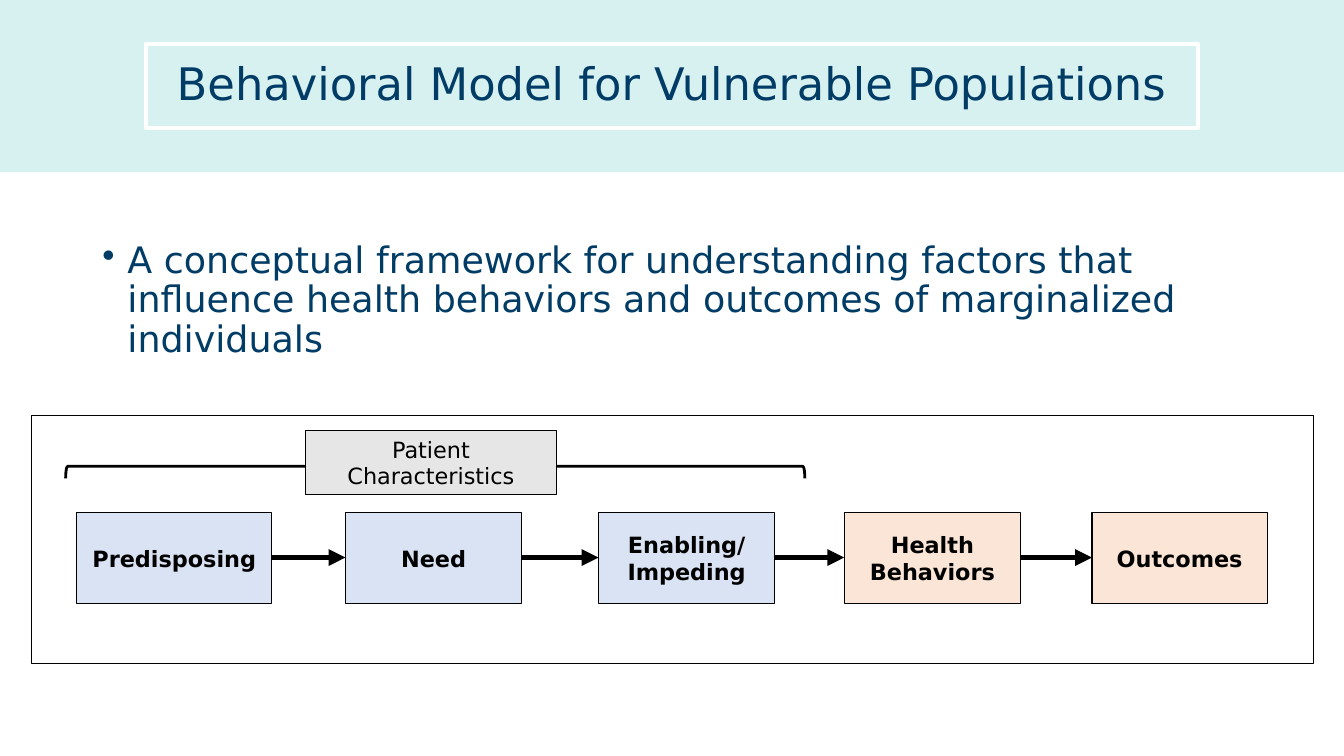
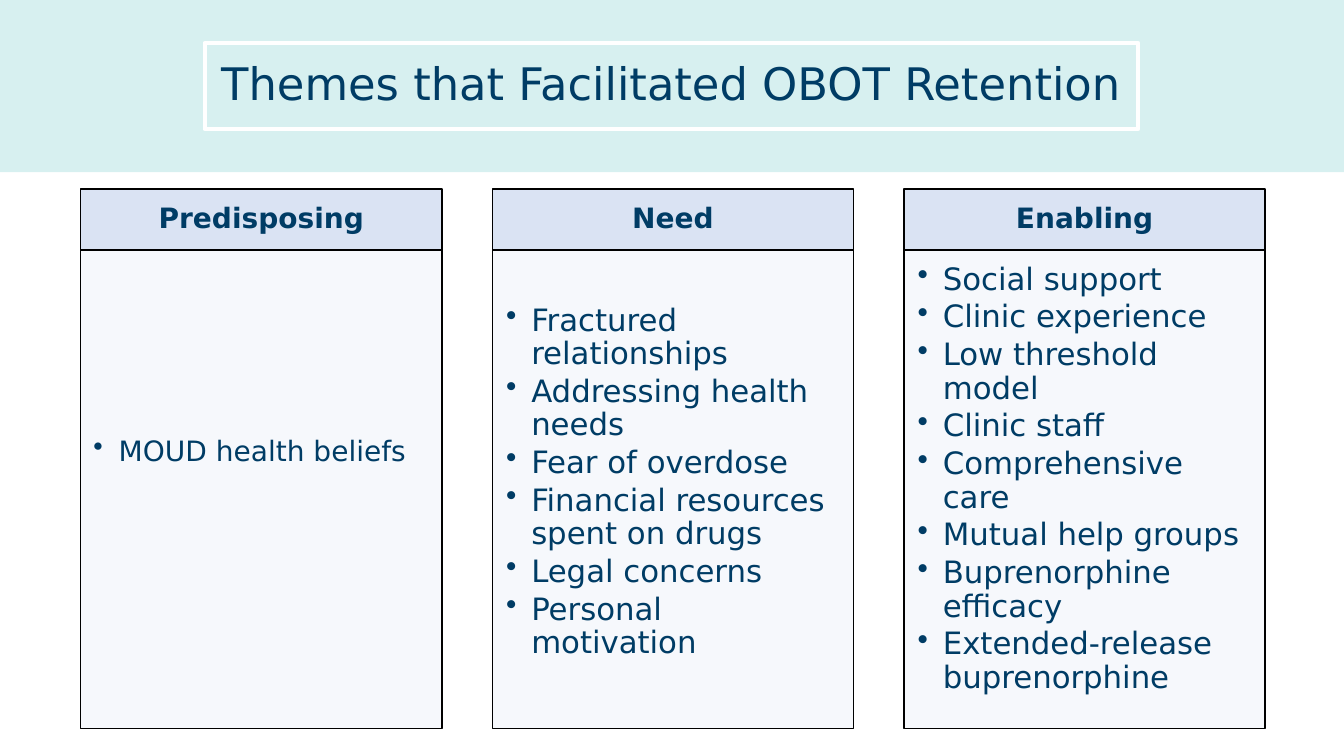
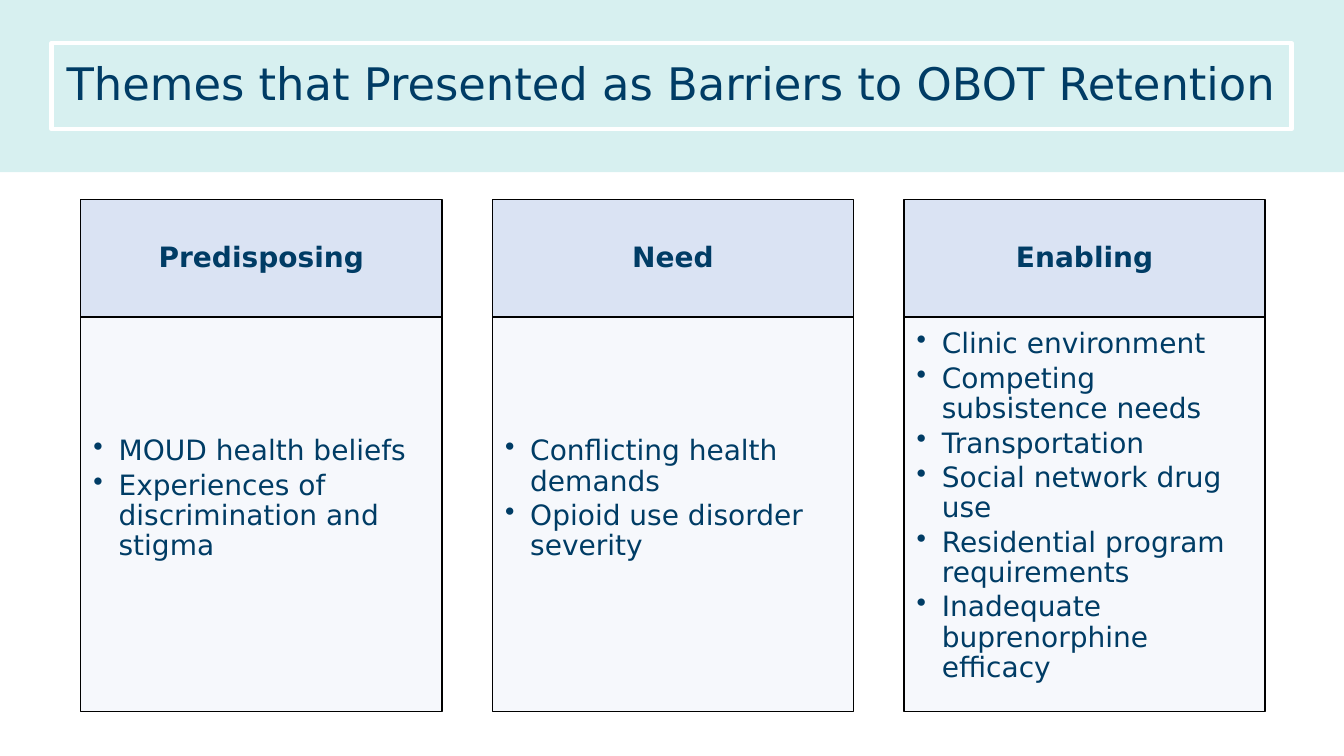
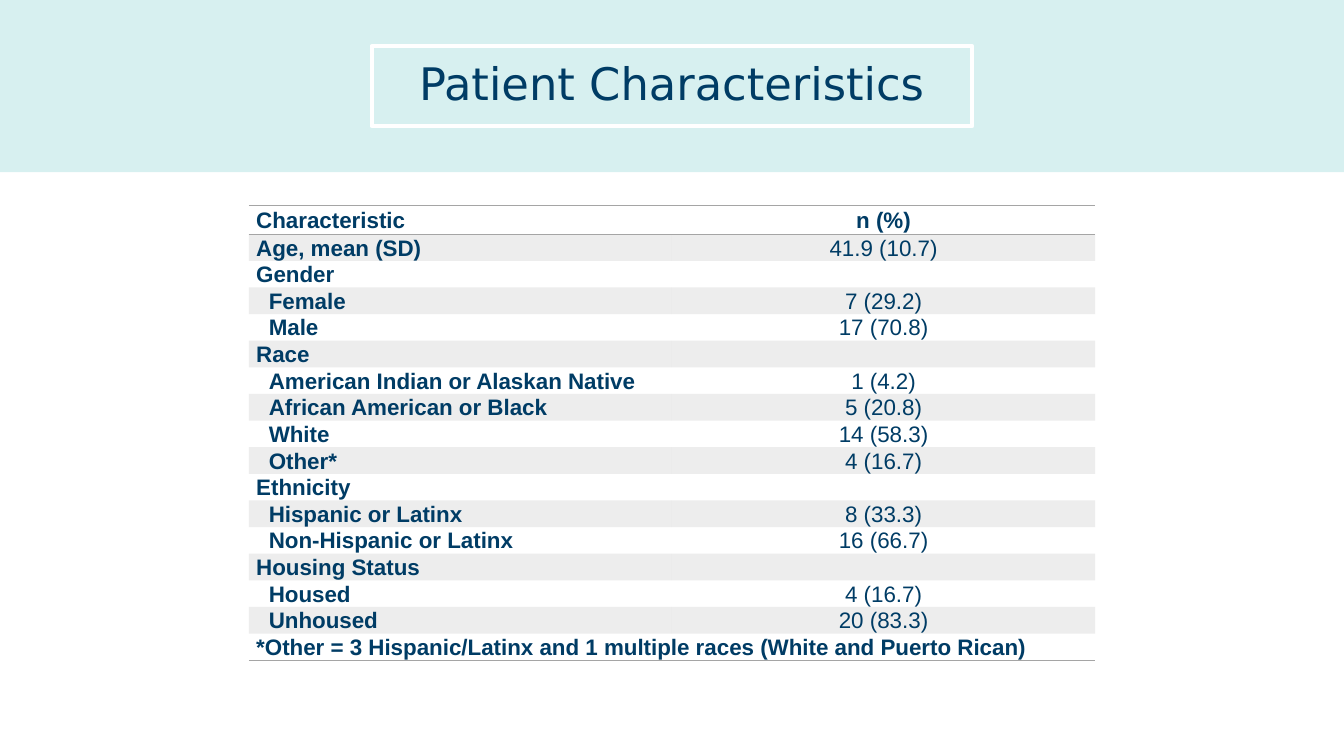
from pptx import Presentation
from pptx.dml.color import RGBColor
from pptx.enum.shapes import MSO_CONNECTOR, MSO_SHAPE
from pptx.enum.text import MSO_ANCHOR, PP_ALIGN
from pptx.oxml.ns import qn
from pptx.oxml.xmlchemy import OxmlElement
from pptx.util import Pt

PX = 9525
WIDTH, HEIGHT = 1280, 720
RECTANGLE = MSO_SHAPE.RECTANGLE
BRACE = MSO_SHAPE.RIGHT_BRACE
STRAIGHT = MSO_CONNECTOR.STRAIGHT
LEFT, CENTER = PP_ALIGN.LEFT, PP_ALIGN.CENTER
TOP, MIDDLE = MSO_ANCHOR.TOP, MSO_ANCHOR.MIDDLE
NO_STYLE = "{2D5ABB26-0587-4C30-8999-92F81FD0307C}"

NAVY, BLACK, WHITE = "003C65", "000000", "FFFFFF"
AQUA, BLUE, PALE_BLUE = "B0E3E2", "DAE3F3", "F6F8FC"
PEACH, LIGHT_GRAY, GRAY = "FBE5D6", "E7E6E6", "A5A5A5"
FONT, TABLE_FONT = "DejaVu Sans", "Arial"


def color(value):
    return RGBColor.from_string(value)


def add_element(parent, tag, **attributes):
    element = OxmlElement(tag)
    for name, value in attributes.items():
        element.set(name, str(value))
    parent.append(element)
    return element


class Deck:
    def __init__(self):
        self.presentation = Presentation()
        self.presentation.slide_width = WIDTH * PX
        self.presentation.slide_height = HEIGHT * PX
        self.slide = None

    def new_slide(self, title, width, height):
        layout = self.presentation.slide_layouts[6]
        self.slide = self.presentation.slides.add_slide(layout)
        self.box(0, 0, WIDTH, 164, fill=AQUA, opacity=50)
        frame = self.box((WIDTH - width) // 2, 82 - height // 2, width, height,
                         line=WHITE, line_width=3)
        self.set_text(frame, [title], 32, spacing=0.9)

    def paint(self, fill, value, opacity=100):
        if value is None:
            fill.background()
            return
        fill.solid()
        fill.fore_color.rgb = color(value)
        if opacity < 100:
            srgb = fill._xPr.find(qn("a:solidFill"))[0]
            add_element(srgb, "a:alpha", val=opacity * 1000)

    def box(self, left, top, width, height, fill=None, line=None,
            line_width=1, opacity=100, kind=RECTANGLE):
        shape = self.slide.shapes.add_shape(
            kind, left * PX, top * PX, width * PX, height * PX)
        shape.shadow.inherit = False
        self.paint(shape.fill, fill, opacity)
        self.paint(shape.line.fill, line)
        if line:
            shape.line.width = Pt(line_width)
        return shape

    def style(self, paragraph, size, ink=NAVY, bold=False, align=CENTER,
              spacing=1.0, font=FONT):
        paragraph.alignment = align
        paragraph.line_spacing = spacing
        paragraph.font.name = font
        paragraph.font.size = Pt(size)
        paragraph.font.bold = bold
        paragraph.font.color.rgb = color(ink)

    def set_text(self, shape, lines, size, anchor=MIDDLE, bullets=False, **style):
        frame = shape.text_frame
        frame.word_wrap = True
        frame.vertical_anchor = anchor
        for index, line in enumerate(lines):
            paragraph = frame.paragraphs[0] if index == 0 else frame.add_paragraph()
            paragraph.text = line
            if bullets:
                properties = paragraph._p.get_or_add_pPr()
                properties.set("marL", str(24 * PX))
                properties.set("indent", str(-24 * PX))
                add_element(properties, "a:buChar", char="•")
                paragraph.space_after = Pt(size * 0.15)
            self.style(paragraph, size, **style)

    def bullet_list(self, shape, lines, size):
        self.set_text(shape, lines, size, anchor=TOP, bullets=True, align=LEFT,
                      spacing=0.9)

    def body_text(self, left, top, width, height, lines, size):
        shape = self.slide.shapes.add_textbox(
            left * PX, top * PX, width * PX, height * PX)
        self.bullet_list(shape, lines, size)

    def arrow(self, start, end, y):
        connector = self.slide.shapes.add_connector(
            STRAIGHT, start * PX, y * PX, end * PX, y * PX)
        connector.line.color.rgb = color(BLACK)
        connector.line.width = Pt(4)
        properties = connector._element.spPr
        add_element(properties.find(qn("a:ln")), "a:tailEnd", type="triangle")
        add_element(properties, "a:effectLst")

    def theme_columns(self, top, header_height, body_height, columns):
        for index, (heading, size, padding, themes) in enumerate(columns):
            left = 77 + index * 392
            header = self.box(left, top, 344, header_height, BLUE, BLACK)
            self.set_text(header, [heading], 20, bold=True, spacing=0.9)
            body = self.box(left, top + header_height, 344, body_height,
                            PALE_BLUE, BLACK, opacity=90)
            frame = body.text_frame
            frame.margin_left = (12 if size == 20 else 13) * PX
            frame.margin_right = 16 * PX
            frame.margin_top = padding * PX
            self.bullet_list(body, themes, size)

    def cell(self, cell, text, fill, indent=0, borders=(), **style):
        cell.margin_left = (7 + indent) * PX
        cell.margin_right = 7 * PX
        cell.margin_top = cell.margin_bottom = 0
        cell.vertical_anchor = MIDDLE
        properties = cell._tc.get_or_add_tcPr()
        for side in borders:
            line = add_element(properties, side, w=Pt(1))
            solid = add_element(line, "a:solidFill")
            add_element(solid, "a:srgbClr", val=GRAY)
        self.paint(cell.fill, fill, 20)
        paragraph = cell.text_frame.paragraphs[0]
        if text:
            paragraph.text = text
        self.style(paragraph, 16, spacing=1.07, font=TABLE_FONT, **style)
        if not text:
            add_element(paragraph._p, "a:endParaRPr", sz=1600)

    def table(self, left, top, column_width, rows):
        heights = [27] + [25] * (len(rows) - 1)
        table = self.slide.shapes.add_table(
            len(rows), 2, left * PX, top * PX,
            2 * column_width * PX, sum(heights) * PX).table
        table.first_row = table.horz_banding = False
        table._tbl.tblPr[0].text = NO_STYLE
        for column in table.columns:
            column.width = column_width * PX
        last = len(rows) - 1
        for index, (label, value, indent) in enumerate(rows):
            table.rows[index].height = heights[index] * PX
            fill = GRAY if index % 2 else None
            borders = {0: ("a:lnT", "a:lnB"), last: ("a:lnB",)}.get(index, ())
            self.cell(table.cell(index, 0), label, fill, indent, borders,
                      bold=True, align=LEFT)
            self.cell(table.cell(index, 1), value, fill, 0, borders, bold=index == 0)
        table.cell(last, 0).merge(table.cell(last, 1))


def behavioral_model(deck):
    deck.new_slide("Behavioral Model for Vulnerable Populations", 1002, 80)
    deck.body_text(88, 226, 1104, 423, [
        "A conceptual framework for understanding factors that influence "
        "health behaviors and outcomes of marginalized individuals"], 26)
    deck.box(30, 396, 1221, 236, line=BLACK)
    brace = deck.box(403, 92, 23, 704, line=BLACK, line_width=2, kind=BRACE)
    brace.rotation = 270
    group = deck.box(291, 410, 239, 61, LIGHT_GRAY, BLACK, 0.75)
    deck.set_text(group, ["Patient Characteristics"], 16, ink=BLACK)
    steps = [
        (["Predisposing"], 73, 186, BLUE),
        (["Need"], 329, 168, BLUE),
        (["Enabling/", "Impeding"], 570, 168, BLUE),
        (["Health Behaviors"], 804, 168, PEACH),
        (["Outcomes"], 1040, 167, PEACH),
    ]
    previous_right = None
    for lines, left, width, fill in steps:
        step = deck.box(left, 488, width, 87, fill, BLACK, 0.75)
        deck.set_text(step, lines, 16, ink=BLACK, bold=True)
        if previous_right:
            deck.arrow(previous_right, left, 531)
        previous_right = left + width


def facilitators(deck):
    deck.new_slide("Themes that Facilitated OBOT Retention", 889, 82)
    deck.theme_columns(180, 58, 456, [
        ("Predisposing", 20, 178, ["MOUD health beliefs"]),
        ("Need", 22, 52, [
            "Fractured relationships", "Addressing health needs",
            "Fear of overdose", "Financial resources spent on drugs",
            "Legal concerns", "Personal motivation"]),
        ("Enabling", 22, 13, [
            "Social support", "Clinic experience", "Low threshold model",
            "Clinic staff", "Comprehensive care", "Mutual help groups",
            "Buprenorphine efficacy", "Extended-release buprenorphine"]),
    ])


def barriers(deck):
    deck.new_slide("Themes that Presented as Barriers to OBOT Retention", 1181, 82)
    deck.theme_columns(190, 112, 376, [
        ("Predisposing", 20, 114, [
            "MOUD health beliefs", "Experiences of discrimination and stigma"]),
        ("Need", 20, 114, [
            "Conflicting health demands", "Opioid use disorder severity"]),
        ("Enabling", 20, 12, [
            "Clinic environment", "Competing subsistence needs",
            "Transportation", "Social network drug use",
            "Residential program requirements",
            "Inadequate buprenorphine efficacy"]),
    ])


def patient_characteristics(deck):
    deck.new_slide("Patient Characteristics", 572, 76)
    deck.table(237, 196, 403, [
        ("Characteristic", "n (%)", 0),
        ("Age, mean (SD)", "41.9 (10.7)", 0),
        ("Gender", "", 0),
        ("Female", "7 (29.2)", 12),
        ("Male", "17 (70.8)", 12),
        ("Race", "", 0),
        ("American Indian or Alaskan Native", "1 (4.2)", 12),
        ("African American or Black", "5 (20.8)", 12),
        ("White", "14 (58.3)", 12),
        ("Other*", "4 (16.7)", 12),
        ("Ethnicity", "", 0),
        ("Hispanic or Latinx", "8 (33.3)", 12),
        ("Non-Hispanic or Latinx", "16 (66.7)", 12),
        ("Housing Status", "", 0),
        ("Housed", "4 (16.7)", 12),
        ("Unhoused", "20 (83.3)", 12),
        ("*Other = 3 Hispanic/Latinx and 1 multiple races (White and Puerto Rican)", "", 0),
    ])


def main():
    deck = Deck()
    behavioral_model(deck)
    facilitators(deck)
    barriers(deck)
    patient_characteristics(deck)
    deck.presentation.save("out.pptx")


if __name__ == "__main__":
    main()
